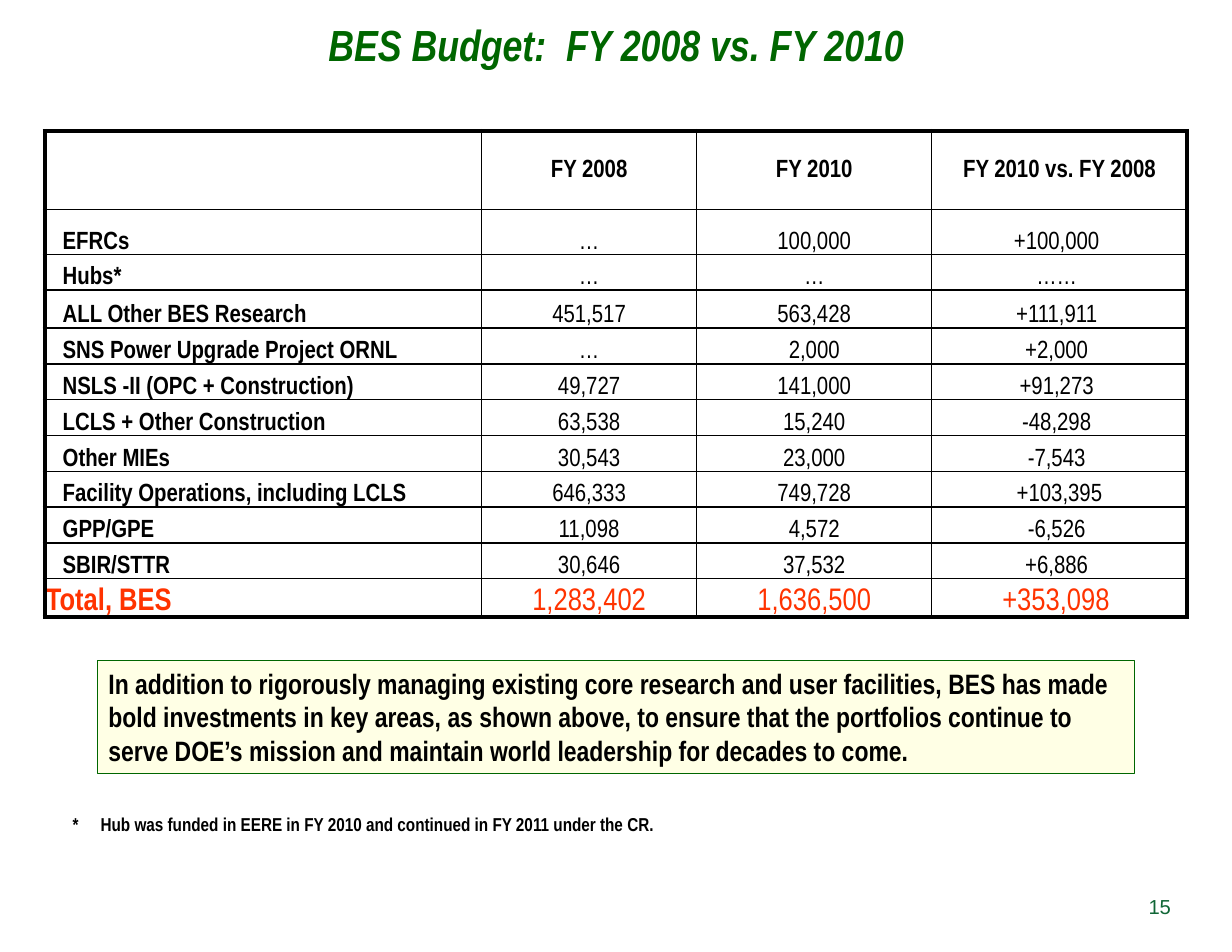
"""Build the BES budget comparison slide, FY 2008 against FY 2010."""
import dataclasses

import lxml.etree
import pptx
import pptx.dml.color
import pptx.enum.shapes
import pptx.enum.text
import pptx.oxml.ns
import pptx.util

Inches = pptx.util.Inches
Pt = pptx.util.Pt
PP_ALIGN = pptx.enum.text.PP_ALIGN
ANCHOR = pptx.enum.text.MSO_ANCHOR
qn = pptx.oxml.ns.qn


@dataclasses.dataclass(frozen=True)
class Theme:
    black: str = "000000"
    green: str = "006600"
    page_green: str = "106636"
    red: str = "FF3300"
    cream: str = "FFFFE5"
    font: str = "Arial Narrow"
    page_font: str = "Arial"
    title: int = 28
    total: int = 20
    callout: int = 18
    body: int = 16
    page: int = 13
    note: int = 12


theme = Theme()


def add_run(p, text, size, color=theme.black, bold=True, italic=False, font=theme.font):
    r = p.add_run()
    r.text = text
    r.font.name = font
    r.font.size = Pt(size)
    r.font.bold = bold
    r.font.italic = italic
    r.font.color.rgb = pptx.dml.color.RGBColor.from_string(color)


def set_borders(cell, widths):
    tcPr = cell._tc.get_or_add_tcPr()
    for i, (side, width) in enumerate(widths.items()):
        ln = lxml.etree.Element(qn(f"a:ln{side}"), w=str(Pt(width)))
        fill = lxml.etree.SubElement(ln, qn("a:solidFill"))
        lxml.etree.SubElement(fill, qn("a:srgbClr"), val=theme.black)
        tcPr.insert(i, ln)


prs = pptx.Presentation()
prs.slide_width = Inches(11)
prs.slide_height = Inches(8.5)
s = prs.slides.add_slide(prs.slide_layouts[6])

sp = s.shapes.add_textbox(Inches(10.08), Inches(7.87), Inches(0.55), Inches(0.45))
tf = sp.text_frame
tf.word_wrap = True
tf.vertical_anchor = ANCHOR.MIDDLE
p = tf.paragraphs[0]
p.alignment = PP_ALIGN.CENTER
add_run(p, "15", theme.page, theme.page_green, bold=False, font=theme.page_font)

rows = [
    ("", "FY 2008", "FY 2010", "FY 2010 vs. FY 2008"),
    ("EFRCs", "…", "100,000", "+100,000 "),
    ("Hubs*", "…", "…", "…… "),
    ("ALL Other BES Research", "451,517", "563,428", "+111,911 "),
    ("SNS Power Upgrade Project ORNL", "…", "2,000", "+2,000 "),
    ("NSLS -II (OPC + Construction)", "49,727", "141,000", "+91,273 "),
    ("LCLS + Other Construction", "63,538", "15,240", "-48,298 "),
    ("Other MIEs", "30,543", "23,000", "-7,543 "),
    ("Facility Operations, including LCLS", "646,333", "749,728", "+103,395"),
    ("GPP/GPE", "11,098", "4,572", "-6,526 "),
    ("SBIR/STTR", "30,646", "37,532", "+6,886 "),
    ("Total, BES", "1,283,402", "1,636,500", "+353,098 "),
]
col_widths = [3.9, 1.92, 2.1, 2.28]
row_heights = [0.7, 0.4, 0.32, 0.34] + [0.32] * 7 + [0.34]
last_row, last_col = len(rows) - 1, len(col_widths) - 1

table = s.shapes.add_table(
    len(rows), len(col_widths), Inches(0.4), Inches(1.17),
    Inches(sum(col_widths)), Inches(sum(row_heights)),
).table
table.first_row = False
table.horz_banding = False
for column, width in zip(table.columns, col_widths):
    column.width = Inches(width)

for i, (values, height) in enumerate(zip(rows, row_heights)):
    table.rows[i].height = Inches(height)
    is_total = i == last_row
    for j, value in enumerate(values):
        cell = table.cell(i, j)
        cell.fill.background()
        cell.margin_left = Inches(0.16 if j == 0 and not is_total else 0.01)
        cell.margin_right = cell.margin_top = Inches(0.01)
        cell.margin_bottom = 0
        cell.vertical_anchor = ANCHOR.MIDDLE if i == 0 else ANCHOR.BOTTOM
        set_borders(cell, {
            "L": 3 if j == 0 else 1,
            "R": 3 if j == last_col else 1,
            "T": 3 if i == 0 else 1,
            "B": 3 if is_total else 1,
        })
        if value:
            p = cell.text_frame.paragraphs[0]
            p.alignment = PP_ALIGN.LEFT if j == 0 else PP_ALIGN.CENTER
            add_run(
                p, value,
                theme.total if is_total else theme.body,
                theme.red if is_total else theme.black,
                bold=i == 0 or j == 0,
            )

sp = s.shapes.add_shape(
    pptx.enum.shapes.MSO_SHAPE.RECTANGLE,
    Inches(0.87), Inches(5.9), Inches(9.26), Inches(1.01),
)
sp.shadow.inherit = False
sp.fill.solid()
sp.fill.fore_color.rgb = pptx.dml.color.RGBColor.from_string(theme.cream)
sp.line.color.rgb = pptx.dml.color.RGBColor.from_string(theme.green)
sp.line.width = Pt(0.75)
tf = sp.text_frame
tf.word_wrap = True
tf.vertical_anchor = ANCHOR.TOP
p = tf.paragraphs[0]
p.alignment = PP_ALIGN.LEFT
add_run(
    p,
    "In addition to rigorously managing existing core research and user facilities, "
    "BES has made bold investments in key areas, as shown above, to ensure that the "
    "portfolios continue to serve DOE’s mission and maintain world leadership for "
    "decades to come.",
    theme.callout,
)

sp = s.shapes.add_textbox(0, 0, Inches(11), Inches(0.79))
tf = sp.text_frame
tf.word_wrap = True
tf.margin_top = tf.margin_bottom = Inches(0.16)
p = tf.paragraphs[0]
p.alignment = PP_ALIGN.CENTER
add_run(p, "BES Budget:  FY 2008 vs. FY 2010", theme.title, theme.green, italic=True)

sp = s.shapes.add_textbox(Inches(0.55), Inches(7.21), Inches(5.46), Inches(0.3))
tf = sp.text_frame
tf.word_wrap = False
p = tf.paragraphs[0]
tabs = lxml.etree.SubElement(p._p.get_or_add_pPr(), qn("a:tabLst"))
lxml.etree.SubElement(tabs, qn("a:tab"), pos=str(Inches(0.25)), algn="l")
add_run(
    p,
    "* \tHub was funded in EERE in FY 2010 and continued in FY 2011 under the CR.",
    theme.note,
)

prs.save("out.pptx")
